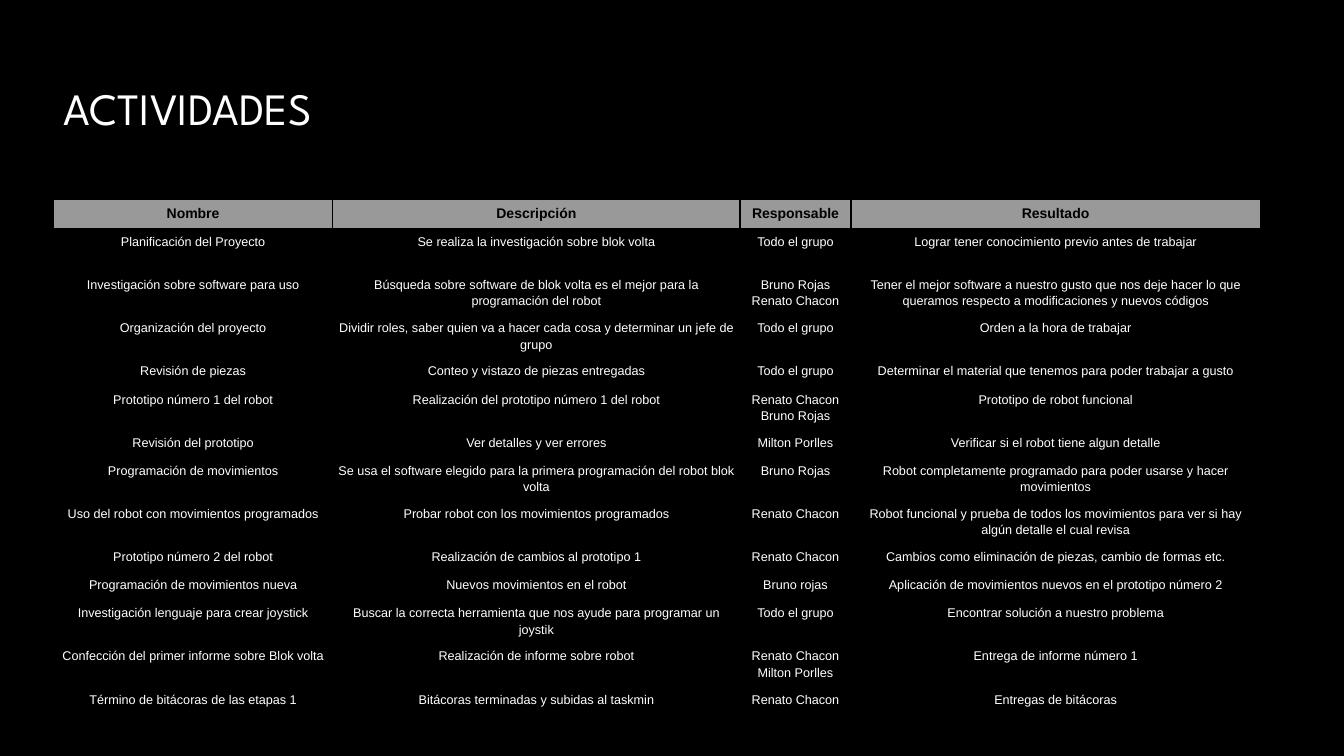
from dataclasses import dataclass

from pptx import Presentation
from pptx import util as u
from pptx.dml.color import RGBColor
from pptx.enum import text
from pptx.oxml import parse_xml
from pptx.oxml.ns import nsdecls

# Content: one tuple per row; a line break separates people sharing a task
TITLE = "ACTIVIDADES"
HEADER = ("Nombre", "Descripción", "Responsable", "Resultado")
ACTIVITIES = [
    ("Planificación del Proyecto",
     "Se realiza la investigación sobre blok volta",
     "Todo el grupo",
     "Lograr tener conocimiento previo antes de trabajar"),
    ("Investigación sobre software para uso",
     "Búsqueda sobre software de blok volta es el mejor para la programación del robot",
     "Bruno Rojas\nRenato Chacon",
     "Tener el mejor software a nuestro gusto que nos deje hacer lo que queramos "
     "respecto a modificaciones y nuevos códigos"),
    ("Organización del proyecto",
     "Dividir roles, saber quien va a hacer cada cosa y determinar un jefe de grupo",
     "Todo el grupo",
     "Orden a la hora de trabajar"),
    ("Revisión de piezas",
     "Conteo y vistazo de piezas entregadas",
     "Todo el grupo",
     "Determinar el material que tenemos para poder trabajar a gusto"),
    ("Prototipo número 1 del robot",
     "Realización del prototipo número 1 del robot",
     "Renato Chacon\nBruno Rojas",
     "Prototipo de robot funcional"),
    ("Revisión del prototipo",
     "Ver detalles y ver errores",
     "Milton Porlles",
     "Verificar si el robot tiene algun detalle"),
    ("Programación de movimientos",
     "Se usa el software elegido para la primera programación del robot blok volta",
     "Bruno Rojas",
     "Robot completamente programado para poder usarse y hacer movimientos"),
    ("Uso del robot con movimientos programados",
     "Probar robot con los movimientos programados",
     "Renato Chacon",
     "Robot funcional y prueba de todos los movimientos para ver si hay algún "
     "detalle el cual revisa"),
    ("Prototipo número 2 del robot",
     "Realización de cambios al prototipo 1",
     "Renato Chacon",
     "Cambios como eliminación de piezas, cambio de formas etc."),
    ("Programación de movimientos nueva",
     "Nuevos movimientos en el robot",
     "Bruno rojas",
     "Aplicación de movimientos nuevos en el prototipo número 2"),
    ("Investigación lenguaje para crear joystick",
     "Buscar la correcta herramienta que nos ayude para programar un joystik",
     "Todo el grupo",
     "Encontrar solución a nuestro problema"),
    ("Confección del primer informe sobre Blok volta",
     "Realización de informe sobre robot",
     "Renato Chacon\nMilton Porlles",
     "Entrega de informe número 1"),
    ("Término de bitácoras de las etapas 1",
     "Bitácoras terminadas y subidas al taskmin",
     "Renato Chacon",
     "Entregas de bitácoras"),
]


@dataclass(frozen=True)
class Theme:
    black: str = "000000"
    white: str = "FFFFFF"
    title_end: str = "A6A6A6"
    header_fill: str = "999999"
    title_font: str = "League Spartan"
    body_font: str = "Arial"
    title_size: int = 32
    header_size: int = 10
    body_size: int = 9


THEME = Theme()

# Grid, in inches
LEFT, TITLE_TOP, TABLE_TOP = 0.53, 0.26, 1.98
TITLE_W, TITLE_H = 10.83, 1.61
COLUMNS = (2.77, 4.04, 1.1, 4.06)
HEADER_H, ROW_H, TALL_ROW_H = 0.29, 0.28, 0.43
CELL_INSET = 0.04


def rgb(color):
    return RGBColor.from_string(color)


def write(tf, content, *, font, size, color, bold=False, align=None, spacing=None):
    """Fill a text frame, one paragraph per line; return its runs."""
    runs = []
    for i, line in enumerate(content.split("\n")):
        p = tf.add_paragraph() if i else tf.paragraphs[0]
        p.alignment, p.line_spacing = align, spacing
        r = p.add_run()
        r.text = line
        r.font.name, r.font.size, r.font.bold = font, u.Pt(size), bold
        r.font.color.rgb = rgb(color)
        runs.append(r)
    return runs


def add_borders(cell):
    """Draw a 1 pt line on each side, ahead of the cell's fill."""
    tc_pr = cell._tc.get_or_add_tcPr()
    for i, side in enumerate(("lnL", "lnR", "lnT", "lnB")):
        tc_pr.insert(i, parse_xml(
            f'<a:{side} {nsdecls("a")} w="12700"><a:solidFill>'
            f'<a:srgbClr val="{THEME.black}"/></a:solidFill></a:{side}>'))


def add_title(s):
    sp = s.shapes.add_textbox(*map(u.Inches, (LEFT, TITLE_TOP, TITLE_W, TITLE_H)))
    tf = sp.text_frame
    tf.word_wrap = True
    tf.vertical_anchor = text.MSO_ANCHOR.MIDDLE
    r, = write(tf, TITLE, font=THEME.title_font, size=THEME.title_size,
               color=THEME.white)
    fill = r.font.fill
    fill.gradient()
    fill.gradient_angle = 267
    for stop, color in zip(fill.gradient_stops, (THEME.white, THEME.title_end)):
        stop.color.rgb = rgb(color)


def row_height(i, row):
    if i == 0:
        return HEADER_H
    # The opening activity has the same room as rows with two people
    return TALL_ROW_H if i == 1 or "\n" in row[2] else ROW_H


def add_activities(s):
    rows = [HEADER, *ACTIVITIES]
    heights = [row_height(i, row) for i, row in enumerate(rows)]
    box = map(u.Inches, (LEFT, TABLE_TOP, sum(COLUMNS), sum(heights)))
    table = s.shapes.add_table(len(rows), len(COLUMNS), *box).table
    table.horz_banding = False
    for column, width in zip(table.columns, COLUMNS):
        column.width = u.Inches(width)
    for i, (row, height) in enumerate(zip(rows, heights)):
        table.rows[i].height = u.Inches(height)
        is_header = i == 0
        for j, content in enumerate(row):
            cell = table.cell(i, j)
            cell.margin_left = cell.margin_right = u.Inches(CELL_INSET)
            cell.margin_top = cell.margin_bottom = u.Inches(CELL_INSET)
            if is_header:
                cell.fill.solid()
                cell.fill.fore_color.rgb = rgb(THEME.header_fill)
            else:
                cell.fill.background()
            add_borders(cell)
            write(cell.text_frame, content, font=THEME.body_font, bold=is_header,
                  size=THEME.header_size if is_header else THEME.body_size,
                  color=THEME.black if is_header else THEME.white,
                  align=text.PP_ALIGN.CENTER, spacing=1.15)


def main():
    prs = Presentation()
    prs.slide_width, prs.slide_height = u.Inches(13.33), u.Inches(7.5)
    s = prs.slides.add_slide(prs.slide_layouts[6])
    s.background.fill.solid()
    s.background.fill.fore_color.rgb = rgb(THEME.black)
    add_title(s)
    add_activities(s)
    prs.save("out.pptx")


if __name__ == "__main__":
    main()
